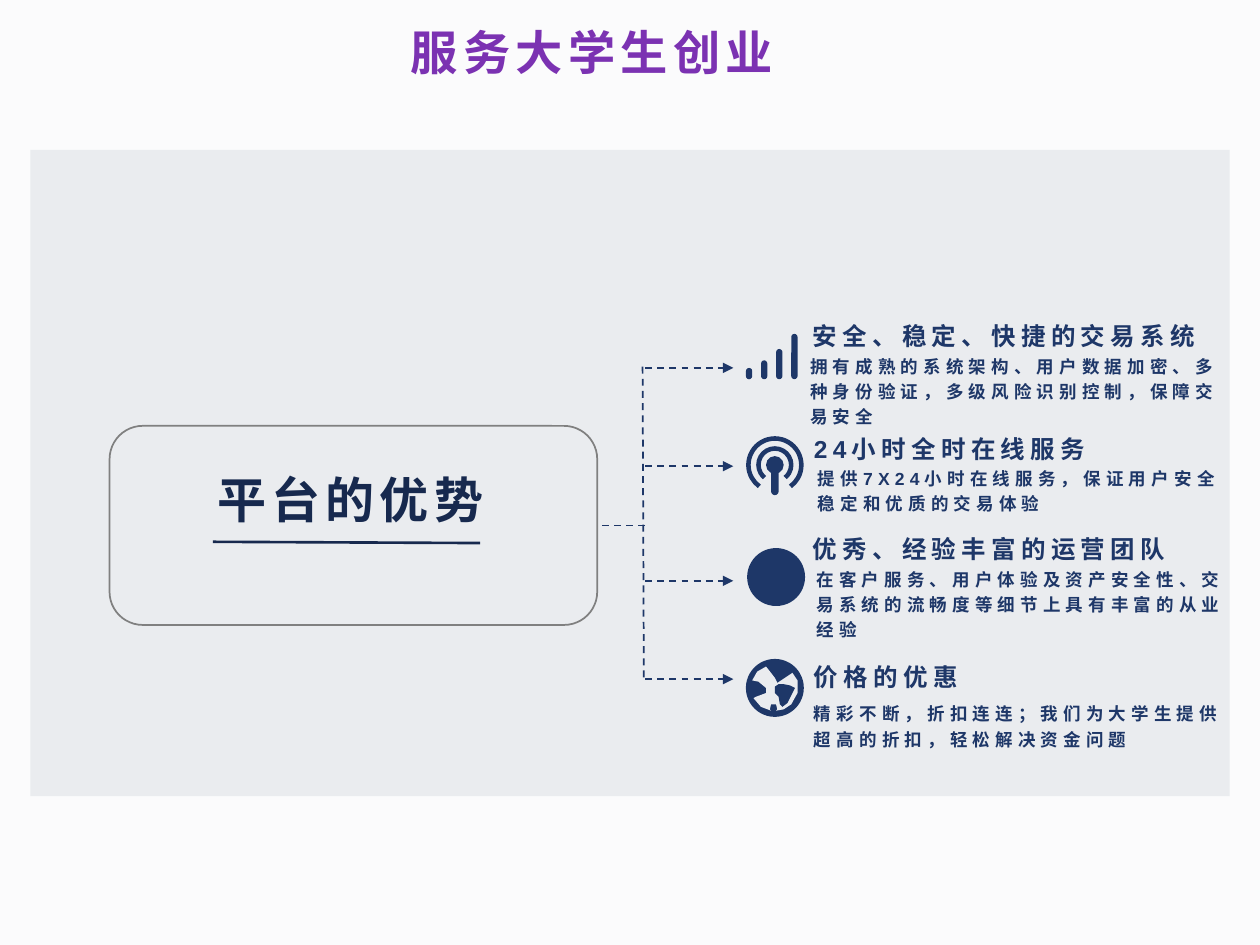
from lxml.etree import SubElement as Sub
from pptx import Presentation
from pptx.dml.color import RGBColor
from pptx.enum.dml import MSO_LINE as Dash
from pptx.enum.shapes import MSO_CONNECTOR as Link, MSO_SHAPE as Kind
from pptx.enum.text import MSO_ANCHOR as Anchor, MSO_AUTO_SIZE as Auto, PP_ALIGN as Align
from pptx.oxml.ns import qn
from pptx.util import Inches, Pt

NAVY, DARK, PANEL = "1E3768", "17294E", "EAECEF"
TRUNK = 5.12
ROWS = [
    (2.92, "安全、稳定、快捷的交易系统", (6.38, 2.18, 3.31, 0.6),
     "拥有成熟的系统架构、用户数据加密、多种身份验证，多级风险识别控制，保障交易安全",
     (6.36, 2.72, 3.49, 0.67)),
    (3.7, "24小时全时在线服务", (6.39, 2.96, 2.67, 0.72),
     "提供7X24小时在线服务，保证用户安全稳定和优质的交易体验",
     (6.42, 3.41, 3.49, 0.67)),
    (4.61, "优秀、经验丰富的运营团队", (6.38, 3.77, 3.15, 0.7),
     "在客户服务、用户体验及资产安全性、交易系统的流畅度等细节上具有丰富的从业经验",
     (6.41, 4.41, 3.49, 0.67)),
    (5.39, "价格的优惠", (6.39, 4.85, 2.67, 0.64),
     "精彩不断，折扣连连；我们为大学生提供超高的折扣，轻松解决资金问题",
     (6.39, 5.38, 3.49, 0.57)),
]
SEA = [(6.16, 5.64), (6.17, 5.63), (6.16, 5.59), (6.12, 5.59), (6.11, 5.63),
       (6.12, 5.64), (6.04, 5.61), (5.98, 5.54), (6, 5.53), (6.08, 5.5),
       (6.08, 5.46), (6.02, 5.41), (5.97, 5.4), (6.01, 5.33), (6.08, 5.29),
       (6.12, 5.34), (6.15, 5.38), (6.17, 5.42), (6.2, 5.4), (6.26, 5.36),
       (6.29, 5.34), (6.33, 5.4), (6.33, 5.5), (6.28, 5.59), (6.22, 5.63)]
LAND = [(6.27, 5.44), (6.22, 5.43), (6.18, 5.43), (6.15, 5.45), (6.15, 5.5),
        (6.18, 5.53), (6.19, 5.59), (6.21, 5.61), (6.25, 5.58), (6.28, 5.52),
        (6.31, 5.46)]


def tint(code):
    return RGBColor.from_string(code)


def apply(item, form):
    for name, value in form.items():
        setattr(item, name, value)


def paint(shape, fill=None, edge=None, width=1):
    shape.shadow.inherit = False
    if fill:
        shape.fill.solid()
        shape.fill.fore_color.rgb = tint(fill)
    else:
        shape.fill.background()
    if edge:
        shape.line.color.rgb = tint(edge)
        shape.line.width = Pt(width)
    else:
        shape.line.fill.background()


def block(slide, kind, area, fill=None, edge=None, width=1):
    shape = slide.shapes.add_shape(kind, *map(Inches, area))
    paint(shape, fill, edge, width)
    return shape


def patch(slide, dots, fill):
    dots = [(Inches(x), Inches(y)) for x, y in dots]
    pen = slide.shapes.build_freeform(*dots[0])
    pen.add_line_segments(dots[1:])
    paint(pen.convert_to_shape(), fill)


def wire(slide, start, end, color=NAVY, width=1, dash=Dash.DASH, head=False):
    line = slide.shapes.add_connector(Link.STRAIGHT, *map(Inches, start + end))
    line.line.color.rgb = tint(color)
    apply(line.line, {"width": Pt(width), "dash_style": dash})
    if head:
        Sub(line.line._get_or_add_ln(), qn("a:tailEnd"), type="triangle")
    Sub(line._element.spPr, qn("a:effectLst"))
    return line


def write(shape, text, size, color=NAVY, face="Arial", space=1.2,
          anchor=Anchor.BOTTOM, align=Align.LEFT, foot=0.04):
    frame = shape.text_frame
    apply(frame, {"word_wrap": True, "auto_size": Auto.NONE, "vertical_anchor": anchor,
                  "margin_left": Inches(0.07), "margin_right": Inches(0.07),
                  "margin_top": Inches(0.04), "margin_bottom": Inches(foot)})
    para = frame.paragraphs[0]
    apply(para, {"alignment": align, "line_spacing": space})
    run = para.add_run()
    run.text = text
    apply(run.font, {"size": Pt(size), "bold": True, "name": face})
    run.font.color.rgb = tint(color)
    props = run._r.get_or_add_rPr()
    props.set("spc", "300")
    Sub(props, qn("a:ea"), typeface="Noto Sans CJK SC")


def label(slide, area, text, size, **form):
    write(slide.shapes.add_textbox(*map(Inches, area)), text, size, **form)


def head(slide):
    title = slide.shapes.title
    sides = ("left", "top", "width", "height")
    apply(title, dict(zip(sides, map(Inches, (3.19, 0.12, 4.75, 0.58)))))
    write(title, "服务大学生创业", 27, color="7B32B2", face="Noto Sans CJK SC",
          space=1.0, anchor=Anchor.MIDDLE)


def signal(slide):
    for step, top in enumerate((2.92, 2.86, 2.77, 2.65)):
        bar = block(slide, Kind.ROUNDED_RECTANGLE,
                    (5.92 + 0.12 * step, top, 0.05, 3.01 - top), NAVY)
        bar.adjustments[0] = 0.5


def mast(slide):
    x, y = 6.15, 3.69
    for r, turn in ((0.21, 54), (0.13, 51)):
        arc = block(slide, Kind.ARC, (x - r, y - r, 2 * r, 2 * r), edge=NAVY, width=2.6)
        arc.adjustments[0] = (180 - turn) * 0.6
        arc.adjustments[1] = turn * 0.6
    block(slide, Kind.OVAL, (x - 0.07, y - 0.07, 0.14, 0.14), NAVY)
    stem = block(slide, Kind.ROUNDED_RECTANGLE, (x - 0.03, y, 0.06, 0.24), NAVY)
    stem.adjustments[0] = 0.5


def globe(slide):
    block(slide, Kind.OVAL, (5.92, 5.23, 0.46, 0.46), NAVY)
    patch(slide, SEA, PANEL)
    patch(slide, LAND, NAVY)


def main():
    deck = Presentation()
    apply(deck, {"slide_width": Inches(10), "slide_height": Inches(7.5)})
    slide = deck.slides.add_slide(deck.slide_layouts[5])
    slide.background.fill.solid()
    slide.background.fill.fore_color.rgb = tint("FBFBFC")
    block(slide, Kind.RECTANGLE, (0.24, 1.19, 9.52, 5.13), PANEL)
    card = block(slide, Kind.ROUNDED_RECTANGLE, (0.87, 3.38, 3.87, 1.58), edge="808080")
    head(slide)
    label(slide, (1.62, 3.59, 2.32, 0.7), "平台的优势", 28, color=DARK,
          anchor=Anchor.TOP, align=Align.CENTER)
    wire(slide, (1.69, 4.3), (3.81, 4.31), DARK, 1.5, Dash.SOLID)
    wire(slide, (TRUNK, 4.17), (4.74, 4.17)).end_connect(card, 3)
    wire(slide, (5.1, 2.91), (5.11, 5.39))
    for y, name, top, note, base in ROWS:
        wire(slide, (TRUNK, y), (5.82, y), head=True)
        label(slide, top, name, 14, foot=0)
        label(slide, base, note, 10, foot=0)
    signal(slide)
    mast(slide)
    block(slide, Kind.OVAL, (5.93, 4.35, 0.46, 0.46), NAVY)
    globe(slide)
    deck.save("out.pptx")


if __name__ == "__main__":
    main()
